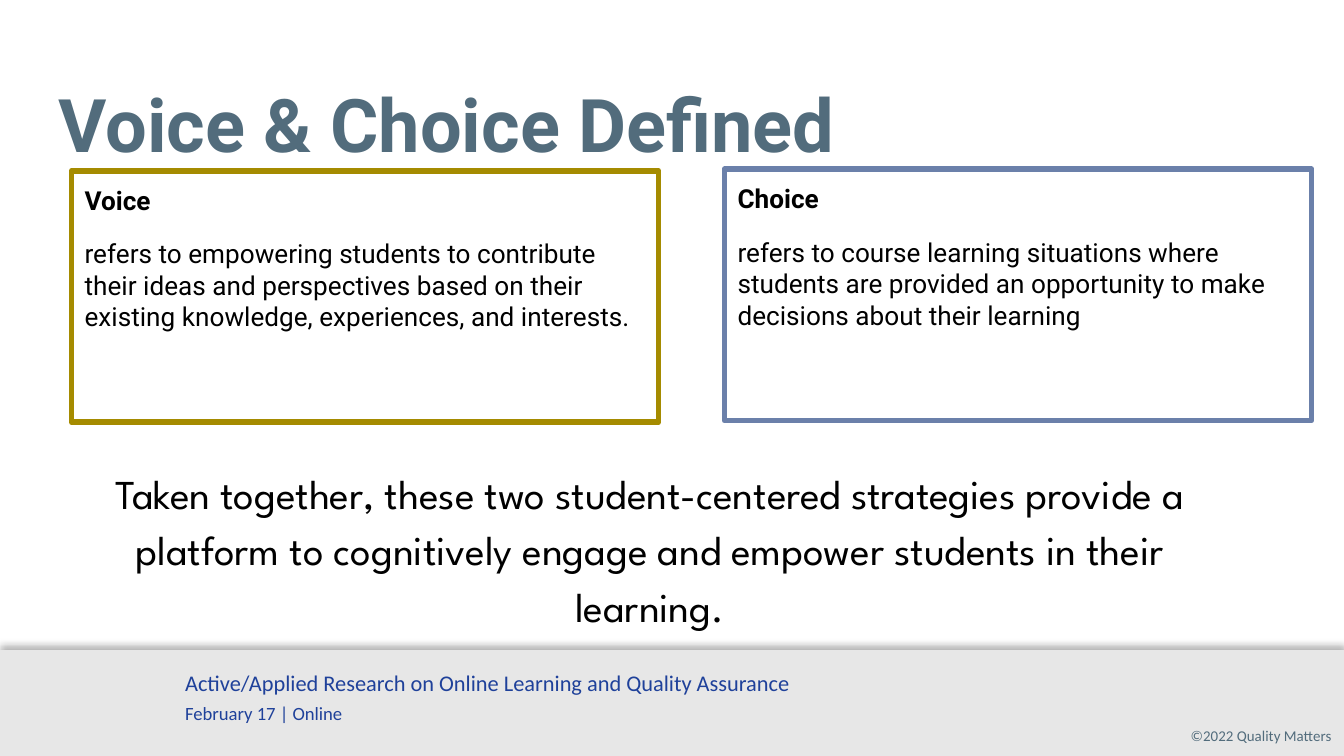
from lxml import etree
from pptx import Presentation
from pptx import util as u
from pptx.dml.color import RGBColor
from pptx.enum import shapes, text
from pptx.oxml import parse_xml

ALIGN = text.PP_ALIGN
TOP = text.MSO_ANCHOR.TOP


def color(hex_string):
    return RGBColor.from_string(hex_string)


def write(frame, paragraphs, margins=(0.25, 0.25, 0.25, 0.25)):
    """Fill a frame with (text, font values, paragraph values) entries."""
    frame.word_wrap = True
    frame.auto_size = text.MSO_AUTO_SIZE.NONE
    frame.vertical_anchor = TOP
    for side, margin in zip(("left", "top", "right", "bottom"), margins):
        setattr(frame, f"margin_{side}", u.Cm(margin))
    for i, (words, font, layout) in enumerate(paragraphs):
        paragraph = frame.add_paragraph() if i else frame.paragraphs[0]
        for key, value in {"alignment": ALIGN.LEFT, **layout}.items():
            setattr(paragraph, key, value)
        run = paragraph.add_run()
        run.text = words
        for key, value in font.items():
            if key == "color":
                run.font.color.rgb = color(value)
            else:
                setattr(run.font, key, value)


deck = Presentation()
deck.slide_width, deck.slide_height = u.Cm(25.4), u.Cm(14.29)
slide = deck.slides.add_slide(deck.slide_layouts[5])

# Footer band with a soft shadow above it
band = slide.shapes.add_shape(shapes.MSO_SHAPE.RECTANGLE,
                              0, u.Cm(12.29), u.Cm(25.4), u.Cm(2))
band.fill.solid()
band.fill.fore_color.rgb = color("E7E7E7")
band.line.fill.background()
band.shadow.inherit = False
effects = band.element.spPr.find("{*}effectLst")
effects.append(parse_xml(
    '<a:outerShdw xmlns:a="http://schemas.openxmlformats.org/drawingml/2006/main"'
    f' blurRad="{u.Pt(4)}" dist="{u.Pt(3)}" dir="16200000" rotWithShape="0">'
    '<a:srgbClr val="000000"><a:alpha val="29000"/></a:srgbClr></a:outerShdw>'))

# Footer texts
rights = slide.shapes.add_textbox(u.Cm(21.13), u.Cm(13.61), u.Cm(4.04), u.Cm(0.61))
write(rights.text_frame,
      [("©2022 Quality Matters",
        {"name": "Calibri", "size": u.Pt(8), "color": "526C7C"},
        {"alignment": ALIGN.RIGHT})],
      (0.25, 0.13, 0, 0.13))

event = slide.shapes.add_textbox(u.Cm(3.25), u.Cm(12.52), u.Cm(16.23), u.Cm(1.3))
event_font = {"name": "Calibri", "color": "1F419A"}
write(event.text_frame,
      [("Active/Applied Research on Online Learning and Quality Assurance",
        {**event_font, "size": u.Pt(12)}, {}),
       ("February 17 | Online",
        {**event_font, "size": u.Pt(10)}, {"space_before": u.Pt(3)})],
      (0.25, 0.13, 0.25, 0.13))

# Title
title = slide.shapes.title
title.left, title.top = u.Cm(0.86), u.Cm(1.24)
title.width, title.height = u.Cm(23.67), u.Cm(1.6)
write(title.text_frame,
      [("Voice & Choice Defined",
        {"name": "Roboto", "size": u.Pt(39.6), "bold": True, "color": "526C7C"}, {})])

# Definition boxes
definitions = [
    ("Voice", 1.35, 3.23, "A58B00",
     "refers to empowering students to contribute their ideas and perspectives "
     "based on their existing knowledge, experiences, and interests."),
    ("Choice", 13.69, 3.2, "6B80AA",
     "refers to course learning situations where students are provided an "
     "opportunity to make decisions about their learning"),
]
definition_font = {"name": "Roboto", "size": u.Pt(14), "color": "000000"}
for term, left, top, border, meaning in definitions:
    box = slide.shapes.add_shape(shapes.MSO_SHAPE.RECTANGLE,
                                 u.Cm(left), u.Cm(top), u.Cm(11.1), u.Cm(4.75))
    box.shadow.inherit = False
    box.fill.background()
    box.line.color.rgb = color(border)
    box.line.width = u.Pt(3)
    etree.SubElement(box.line._get_or_add_ln(),
                     "{http://schemas.openxmlformats.org/drawingml/2006/main}round")
    write(box.text_frame,
          [(term, {**definition_font, "bold": True}, {}),
           (meaning, {**definition_font, "bold": False},
            {"space_before": u.Pt(12), "space_after": u.Pt(12)})])

# Closing statement
summary = slide.shapes.add_textbox(u.Cm(1.55), u.Cm(8.46), u.Cm(21.46), u.Cm(5.18))
write(summary.text_frame,
      [("Taken together, these two student-centered strategies provide a platform "
        "to cognitively engage and empower students in their learning.",
        {"name": "League Spartan", "size": u.Pt(22), "color": "000000"},
        {"alignment": ALIGN.CENTER, "line_spacing": 1.15})])

deck.save("out.pptx")
